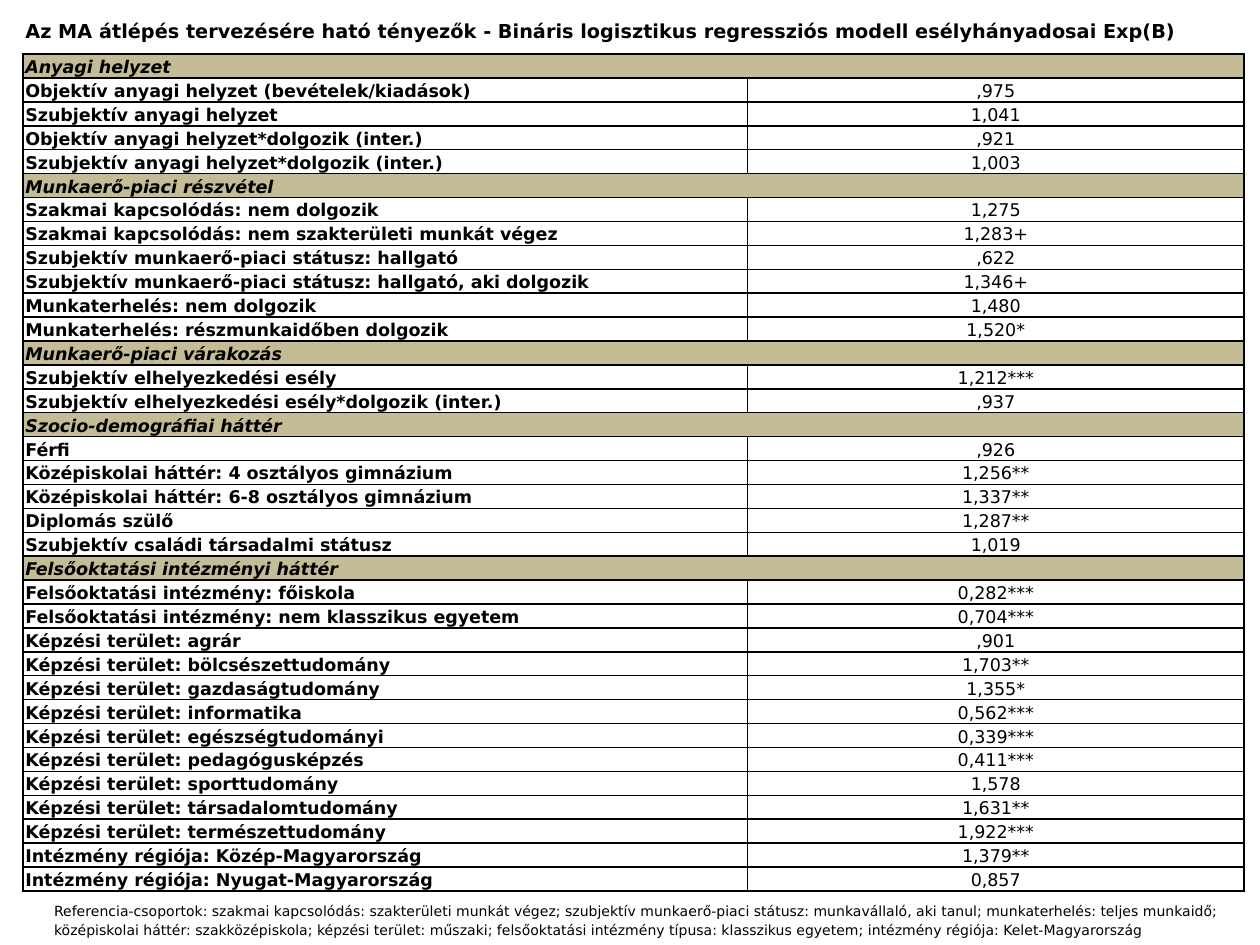
import pptx
import pptx.util
import pptx.dml.color
import pptx.enum.text
import pptx.oxml.ns
import lxml.etree

Pt = pptx.util.Pt
ALIGN = pptx.enum.text.PP_ALIGN
COLORS = {"text": "000000", "border": "000000", "section": "C4BC96"}
FONT = "DejaVu Sans"

TITLE = ("Az MA átlépés tervezésére ható tényezők - Bináris logisztikus "
         "regressziós modell esélyhányadosai Exp(B)")
SECTIONS = {
    "Anyagi helyzet": [
        ("Objektív anyagi helyzet (bevételek/kiadások)", ",975"),
        ("Szubjektív anyagi helyzet", "1,041"),
        ("Objektív anyagi helyzet*dolgozik (inter.)", ",921"),
        ("Szubjektív anyagi helyzet*dolgozik (inter.)", "1,003"),
    ],
    "Munkaerő-piaci részvétel": [
        ("Szakmai kapcsolódás: nem dolgozik", "1,275"),
        ("Szakmai kapcsolódás: nem szakterületi munkát végez", "1,283+"),
        ("Szubjektív munkaerő-piaci státusz: hallgató", ",622"),
        ("Szubjektív munkaerő-piaci státusz: hallgató, aki dolgozik", "1,346+"),
        ("Munkaterhelés: nem dolgozik", "1,480"),
        ("Munkaterhelés: részmunkaidőben dolgozik", "1,520*"),
    ],
    "Munkaerő-piaci várakozás": [
        ("Szubjektív elhelyezkedési esély", "1,212***"),
        ("Szubjektív elhelyezkedési esély*dolgozik (inter.)", ",937"),
    ],
    "Szocio-demográfiai háttér": [
        ("Férfi", ",926"),
        ("Középiskolai háttér: 4 osztályos gimnázium", "1,256**"),
        ("Középiskolai háttér: 6-8 osztályos gimnázium", "1,337**"),
        ("Diplomás szülő", "1,287**"),
        ("Szubjektív családi társadalmi státusz", "1,019"),
    ],
    "Felsőoktatási intézményi háttér": [
        ("Felsőoktatási intézmény: főiskola", "0,282***"),
        ("Felsőoktatási intézmény: nem klasszikus egyetem", "0,704***"),
        ("Képzési terület: agrár", ",901"),
        ("Képzési terület: bölcsészettudomány", "1,703**"),
        ("Képzési terület: gazdaságtudomány", "1,355*"),
        ("Képzési terület: informatika", "0,562***"),
        ("Képzési terület: egészségtudományi", "0,339***"),
        ("Képzési terület: pedagógusképzés", "0,411***"),
        ("Képzési terület: sporttudomány", "1,578"),
        ("Képzési terület: társadalomtudomány", "1,631**"),
        ("Képzési terület: természettudomány", "1,922***"),
        ("Intézmény régiója: Közép-Magyarország", "1,379**"),
        ("Intézmény régiója: Nyugat-Magyarország", "0,857"),
    ],
}
REFERENCE_GROUPS = (
    "Referencia-csoportok: szakmai kapcsolódás: szakterületi munkát végez; "
    "szubjektív munkaerő-piaci státusz: munkavállaló, aki tanul; "
    "munkaterhelés: teljes munkaidő; középiskolai háttér: szakközépiskola; "
    "képzési terület: műszaki; felsőoktatási intézmény típusa: klasszikus "
    "egyetem; intézmény régiója: Kelet-Magyarország")

TABLE_LEFT, TABLE_TOP = 13, 3.6
COLUMN_WIDTHS = (414, 284)
TITLE_HEIGHT, ROW_HEIGHT = 27.3, 13.69


def write(frame, text, size, bold=False, italic=False, align=ALIGN.LEFT):
    frame.text = text
    paragraph = frame.paragraphs[0]
    paragraph.alignment = align
    paragraph.line_spacing = 1.15
    font = paragraph.runs[0].font
    font.name, font.size, font.bold, font.italic = FONT, Pt(size), bold, italic
    font.color.rgb = pptx.dml.color.RGBColor.from_string(COLORS["text"])


def set_borders(cell, visible):
    """Draw the sides named in visible (of "LRTB") and hide the others."""
    properties = cell._tc.get_or_add_tcPr()
    qn = pptx.oxml.ns.qn
    for position, side in enumerate("LRTB"):
        line = lxml.etree.Element(qn(f"a:ln{side}"), w=str(Pt(1)))
        if side in visible:
            fill = lxml.etree.SubElement(line, qn("a:solidFill"))
            lxml.etree.SubElement(fill, qn("a:srgbClr"), val=COLORS["border"])
        else:
            lxml.etree.SubElement(line, qn("a:noFill"))
        properties.insert(position, line)


def style_cell(cell, fill=None, borders="LRTB"):
    cell.margin_left = cell.margin_right = Pt(1.5)
    cell.margin_top = cell.margin_bottom = 0
    cell.vertical_anchor = pptx.enum.text.MSO_ANCHOR.MIDDLE
    if fill:
        cell.fill.solid()
        cell.fill.fore_color.rgb = pptx.dml.color.RGBColor.from_string(fill)
    else:
        cell.fill.background()
    set_borders(cell, borders)


def add_odds_table(slide):
    rows = [(TITLE, None)]
    for section, factors in SECTIONS.items():
        rows += [(section, None), *factors]
    height = TITLE_HEIGHT + ROW_HEIGHT * (len(rows) - 1)
    table = slide.shapes.add_table(
        len(rows), len(COLUMN_WIDTHS), Pt(TABLE_LEFT), Pt(TABLE_TOP),
        Pt(sum(COLUMN_WIDTHS)), Pt(height)).table
    table.first_row = table.horz_banding = False
    for column, width in zip(table.columns, COLUMN_WIDTHS):
        column.width = Pt(width)

    for index, (label, odds) in enumerate(rows):
        is_title, is_section = index == 0, index > 0 and odds is None
        table.rows[index].height = Pt(TITLE_HEIGHT if is_title else ROW_HEIGHT)
        label_cell, odds_cell = table.cell(index, 0), table.cell(index, 1)
        for cell in (label_cell, odds_cell):
            style_cell(cell, COLORS["section"] if is_section else None,
                       "B" if is_title else "LRTB")
        write(label_cell.text_frame, label, 11 if is_title else 10,
              bold=True, italic=is_section)
        if odds is None:
            label_cell.merge(odds_cell)
        else:
            write(odds_cell.text_frame, odds, 10, align=ALIGN.CENTER)


def add_reference_note(slide):
    note = slide.shapes.add_textbox(Pt(23.8), Pt(510.5), Pt(696), Pt(29.5))
    note.text_frame.word_wrap = True
    write(note.text_frame, REFERENCE_GROUPS, 8)


def main():
    deck = pptx.Presentation()
    deck.slide_width, deck.slide_height = Pt(720), Pt(540)
    slide = deck.slides.add_slide(deck.slide_layouts[6])
    add_odds_table(slide)
    add_reference_note(slide)
    deck.save("out.pptx")


if __name__ == "__main__":
    main()
